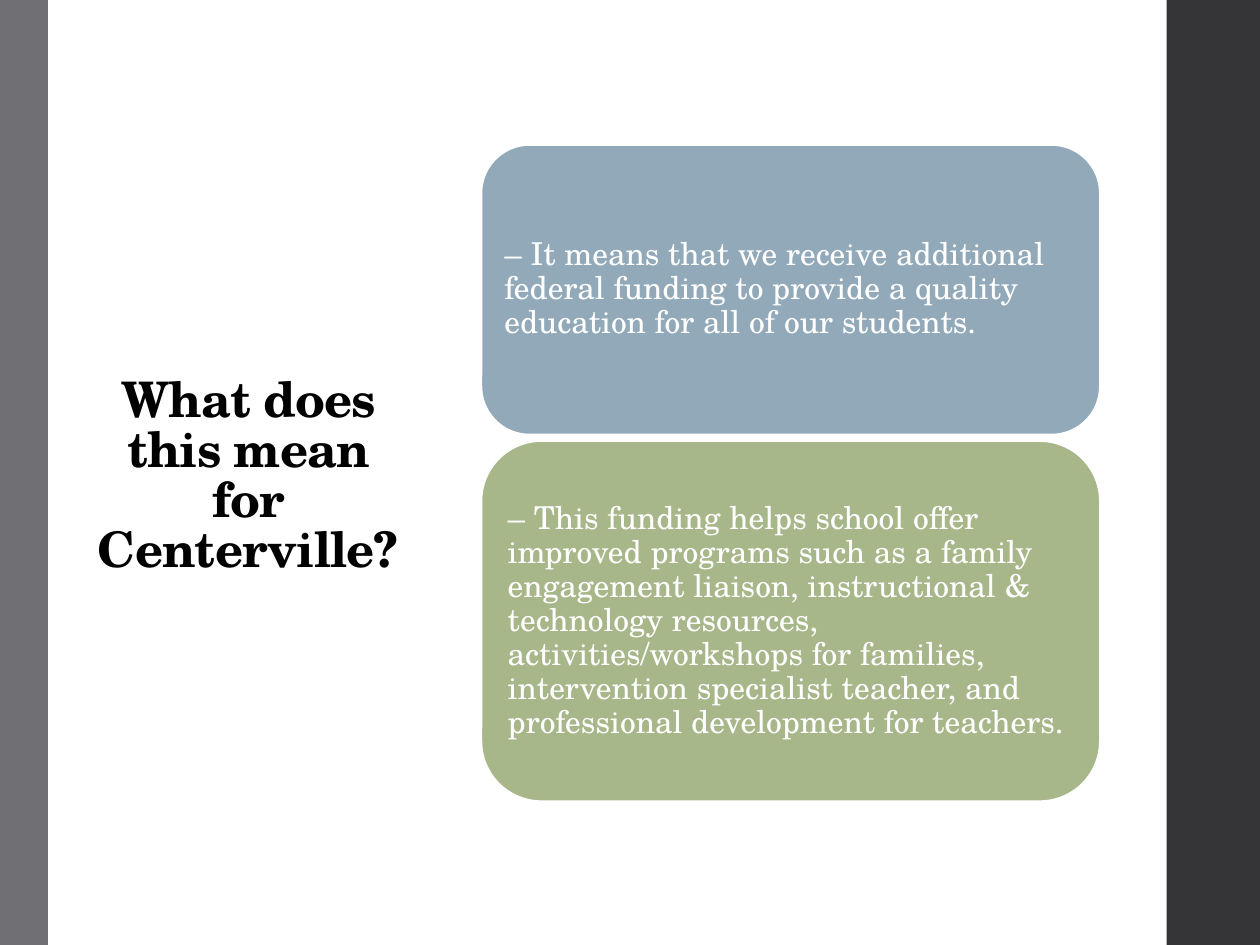
from dataclasses import dataclass

from pptx import Presentation
from pptx.dml.color import RGBColor
from pptx.enum.shapes import MSO_SHAPE
from pptx.enum.text import MSO_ANCHOR, PP_ALIGN
from pptx.util import Inches, Pt

RECT, ROUND = MSO_SHAPE.RECTANGLE, MSO_SHAPE.ROUNDED_RECTANGLE
MIDDLE, BOTTOM = MSO_ANCHOR.MIDDLE, MSO_ANCHOR.BOTTOM
LEFT, CENTER = PP_ALIGN.LEFT, PP_ALIGN.CENTER


@dataclass(frozen=True)
class Theme:
    font: str = "TeX Gyre Schola"
    title: int = 28
    body: int = 18
    black: str = "000000"
    white: str = "FFFFFF"
    dark: str = "353537"
    gray: str = "6F6F74"
    blue: str = "92A9B9"
    green: str = "A7B789"


@dataclass(frozen=True)
class Band:
    left: float
    width: float
    color: str


@dataclass(frozen=True)
class Card:
    height: float
    color: str
    text: str


THEME = Theme()
WIDTH, HEIGHT = 10, 7.5
CARD_LEFT, CARD_TOP, CARD_WIDTH, CARD_GAP = 3.82, 1.15, 4.91, 0.05

BANDS = [
    Band(9.21, 0.8, THEME.dark),
    Band(0, 0.38, THEME.gray),
    Band(3.33, 5.93, THEME.white),
]
CARDS = [
    Card(2.3, THEME.blue,
         "– It means that we receive additional federal funding to provide "
         "a quality education for all of our students."),
    Card(2.86, THEME.green,
         "– This funding helps school offer improved programs such as a "
         "family engagement liaison, instructional & technology resources, "
         "activities/workshops for families, intervention specialist "
         "teacher, and professional development for teachers."),
]


def add_block(slide, kind, left: float, top: float, width: float,
              height: float, color: str):
    """Add a filled shape with neither outline nor shadow."""
    block = slide.shapes.add_shape(
        kind, Inches(left), Inches(top), Inches(width), Inches(height))
    block.shadow.inherit = False
    block.fill.solid()
    block.fill.fore_color.rgb = RGBColor.from_string(color)
    block.line.fill.background()
    return block


def set_text(frame, text: str, size: int, color: str, align, anchor,
             spacing: float):
    """Fill a text frame with one paragraph and return it."""
    frame.word_wrap = True
    frame.vertical_anchor = anchor
    para = frame.paragraphs[0]
    para.text = text
    para.alignment = align
    para.line_spacing = spacing
    para.font.name = THEME.font
    para.font.size = Pt(size)
    para.font.color.rgb = RGBColor.from_string(color)
    return para


def add_title(slide, text: str) -> None:
    box = slide.shapes.add_textbox(
        Inches(0.62), Inches(0.7), Inches(2.7), Inches(3.93))
    para = set_text(box.text_frame, text, THEME.title, THEME.black,
                    CENTER, BOTTOM, 0.85)
    para.font.bold = True
    # Letter spacing in hundredths of a point
    para.runs[0].font._element.set("spc", "-50")


def add_card(slide, card: Card, top: float) -> None:
    block = add_block(slide, ROUND, CARD_LEFT, top, CARD_WIDTH,
                      card.height, card.color)
    block.line.color.rgb = RGBColor.from_string(THEME.white)
    block.line.width = Pt(1.1)
    frame = block.text_frame
    frame.margin_left = frame.margin_right = Inches(0.07)
    frame.margin_top = frame.margin_bottom = Inches(0.07)
    set_text(frame, card.text, THEME.body, THEME.white, LEFT, MIDDLE, 0.9)


def main() -> None:
    deck = Presentation()
    deck.slide_width, deck.slide_height = Inches(WIDTH), Inches(HEIGHT)
    slide = deck.slides.add_slide(deck.slide_layouts[6])

    # Side bands and content panel
    for band in BANDS:
        add_block(slide, RECT, band.left, 0, band.width, HEIGHT, band.color)

    # Title
    add_title(slide, "What does this mean for Centerville?")

    # Stacked cards
    top = CARD_TOP
    for card in CARDS:
        add_card(slide, card, top)
        top += card.height + CARD_GAP

    deck.save("out.pptx")


if __name__ == "__main__":
    main()
